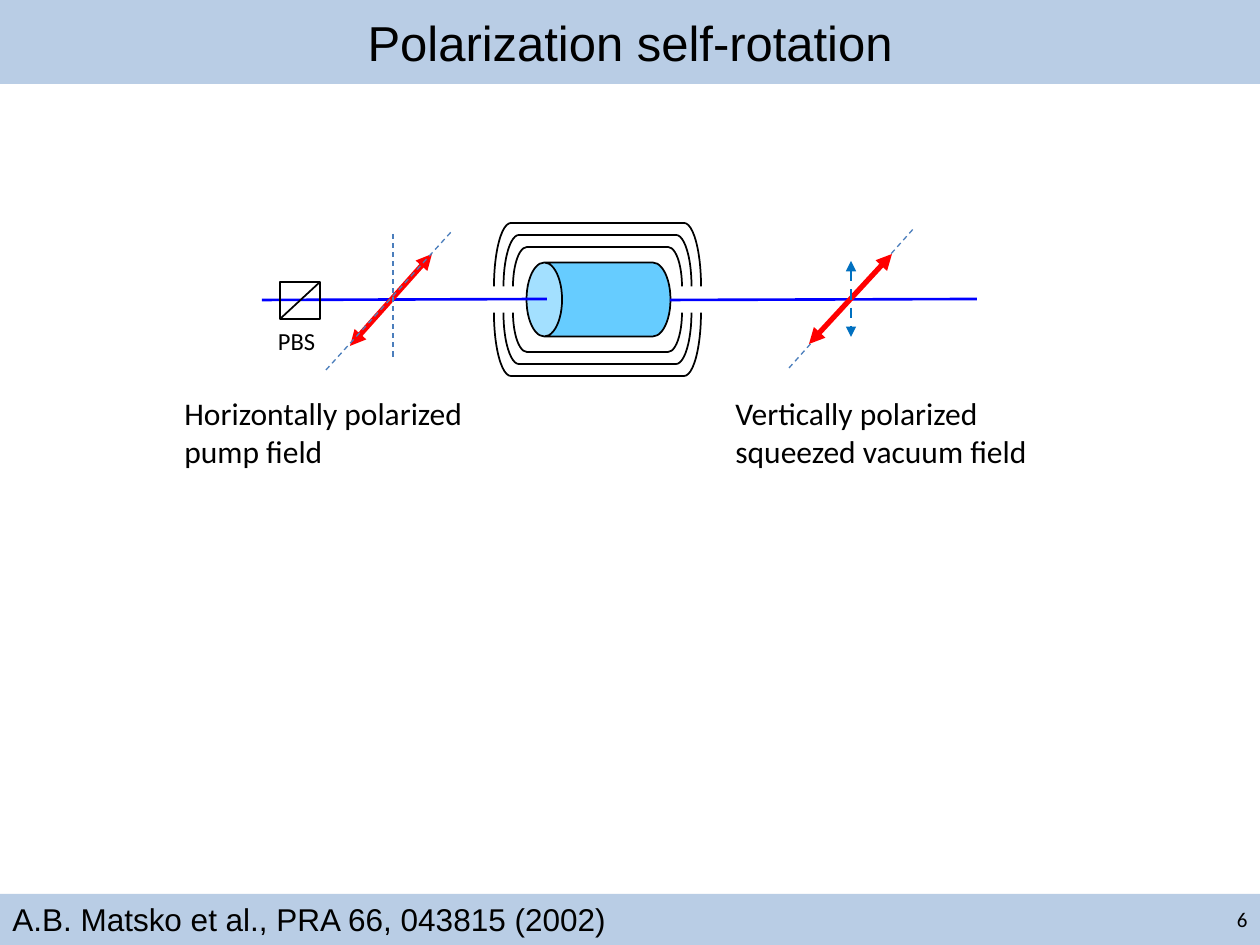
from lxml import etree
from pptx import Presentation
from pptx import util as u
from pptx.dml.color import RGBColor
from pptx.enum import dml, shapes, text
from pptx.oxml.ns import qn

PX = 914400 / 126
COLORS = {
    "band": "B9CDE5",
    "black": "000000",
    "beam": "0000FF",
    "field": "FF0000",
    "axis": "4B7EBC",
    "vacuum": "0070C0",
    "cell": "66CCFF",
}


def emu(px):
    return u.Emu(round(px * PX))


def rgb(name):
    return RGBColor.from_string(COLORS[name])


def add_line(slide, start, end, color, width, dashed=False, arrows=False):
    connector = slide.shapes.add_connector(
        shapes.MSO_CONNECTOR.STRAIGHT, *map(emu, (*start, *end)))
    connector.line.color.rgb = rgb(color)
    connector.line.width = u.Pt(width)
    if dashed:
        connector.line.dash_style = dml.MSO_LINE.DASH
    properties = connector._element.spPr
    if arrows:
        outline = properties.find(qn("a:ln"))
        for end_name in ("a:headEnd", "a:tailEnd"):
            etree.SubElement(outline, qn(end_name), type="triangle")
    etree.SubElement(properties, qn("a:effectLst"))


def add_shape(slide, kind, box, fill=None, line=None):
    shape = slide.shapes.add_shape(kind, *map(emu, box))
    shape.shadow.inherit = False
    if fill:
        shape.fill.solid()
        shape.fill.fore_color.rgb = rgb(fill)
    else:
        shape.fill.background()
    if line:
        shape.line.color.rgb = rgb(line)
        shape.line.width = u.Pt(1)
    else:
        shape.line.fill.background()
    return shape


def add_turned_shape(slide, kind, box, rotation, adjustment, fill=None):
    left, top, width, height = box
    frame = (left + (width - height) / 2, top + (height - width) / 2, height, width)
    shape = add_shape(slide, kind, frame, fill, "black")
    shape.rotation = rotation
    shape.adjustments[0] = adjustment


def write(shape, lines, size, font, align=text.PP_ALIGN.LEFT,
          anchor=text.MSO_ANCHOR.TOP, wrap=True):
    frame = shape.text_frame
    frame.word_wrap = wrap
    frame.auto_size = text.MSO_AUTO_SIZE.NONE
    frame.vertical_anchor = anchor
    for index, line in enumerate(lines):
        paragraph = frame.add_paragraph() if index else frame.paragraphs[0]
        paragraph.alignment = align
        run = paragraph.add_run()
        run.text = line
        run.font.size = u.Pt(size)
        run.font.name = font
        run.font.color.rgb = rgb("black")
    return frame


def add_caption(slide, box, lines, size=18, **options):
    return write(slide.shapes.add_textbox(*map(emu, box)), lines, size, "Calibri", **options)


def build_title(slide, box):
    title = slide.shapes.title
    title.left, title.top, title.width, title.height = map(emu, box)
    title.fill.solid()
    title.fill.fore_color.rgb = rgb("band")
    write(title, ["Polarization self-rotation"], 28, "Arial",
          text.PP_ALIGN.CENTER, text.MSO_ANCHOR.MIDDLE)


def build_vapor_cell(slide, box):
    left, top, width, height = box
    center_x, center_y = left + width / 2, top + height / 2
    add_turned_shape(slide, shapes.MSO_SHAPE.CAN,
                     (center_x - 71, center_y - 37, 144, 74), 270, 0.48, "cell")
    gap = 13
    for layer in range(3):
        shield_width = width - 19 * (2 - layer)
        depth = height / 2 - gap - 12 * (2 - layer)
        shield_left = center_x - shield_width / 2
        rounding = (14 + 1.5 * layer) / depth
        for shield_top, rotation in ((center_y - gap - depth, 90), (center_y + gap, 270)):
            add_turned_shape(slide, shapes.MSO_SHAPE.LEFT_BRACKET,
                             (shield_left, shield_top, shield_width, depth),
                             rotation, rounding)


def build_beams(slide, box):
    left, top, width, height = box
    for start, end in ((0, 285), (408, width)):
        add_line(slide, (left + start, top + height), (left + end, top), "beam", 1.5)


def build_polarization(slide, box, field, vertical, vacuum=False):
    left, top, width, height = box
    x, upper, lower = vertical

    def draw_axis():
        add_line(slide, (left, top + height), (left + width, top), "axis", 0.75, dashed=True)

    def draw_field():
        field_left, field_top, field_width, field_height = field
        add_line(slide, (left + field_left + field_width, top + field_top),
                 (left + field_left, top + field_top + field_height),
                 "field", 3, arrows=True)

    for draw in (draw_axis, draw_field) if vacuum else (draw_field, draw_axis):
        draw()
    add_line(slide, (left + x, top + upper), (left + x, top + lower),
             "vacuum" if vacuum else "axis", 1.5 if vacuum else 0.75,
             dashed=True, arrows=vacuum)


def build_beam_splitter(slide, box):
    left, top, width, height = box
    add_shape(slide, shapes.MSO_SHAPE.RECTANGLE, box, line="black")
    add_line(slide, (left, top + height), (left + width, top), "black", 1)
    frame = add_caption(slide, (left - 7, top + height + 2, 52, 52), ["PBS"], 14)
    frame.margin_left = frame.margin_right = emu(5)
    frame.margin_top = frame.margin_bottom = emu(5)


def build_footer(slide, box):
    left, top, width, height = box
    band = add_shape(slide, shapes.MSO_SHAPE.RECTANGLE, box, "band")
    write(band, ["A.B. Matsko et al., PRA 66, 043815 (2002)"], 18, "Arial")
    add_caption(slide, (left + width - 294, top, 294, height), ["6"], 12,
                align=text.PP_ALIGN.RIGHT, anchor=text.MSO_ANCHOR.MIDDLE)


def main():
    presentation = Presentation()
    presentation.slide_width, presentation.slide_height = emu(1260), emu(945)
    slide = presentation.slides.add_slide(presentation.slide_layouts[5])
    build_title(slide, (0, 0, 1260, 84))
    build_vapor_cell(slide, (494, 223, 207, 153))
    build_beams(slide, (262, 299, 715, 1))
    build_polarization(slide, (326, 231, 126, 139), (24, 23, 82, 92), (67, 3, 128))
    build_polarization(slide, (789, 227, 126, 141), (20, 27, 83, 90), (62, 34, 110), vacuum=True)
    build_beam_splitter(slide, (280, 282, 40, 37))
    add_caption(slide, (172, 388, 306, 89),
                ["Horizontally polarized", "pump field"], wrap=False)
    add_caption(slide, (723, 388, 320, 89),
                ["Vertically polarized", "squeezed vacuum field"], wrap=False)
    build_footer(slide, (0, 894, 1260, 51))
    presentation.save("out.pptx")


if __name__ == "__main__":
    main()
